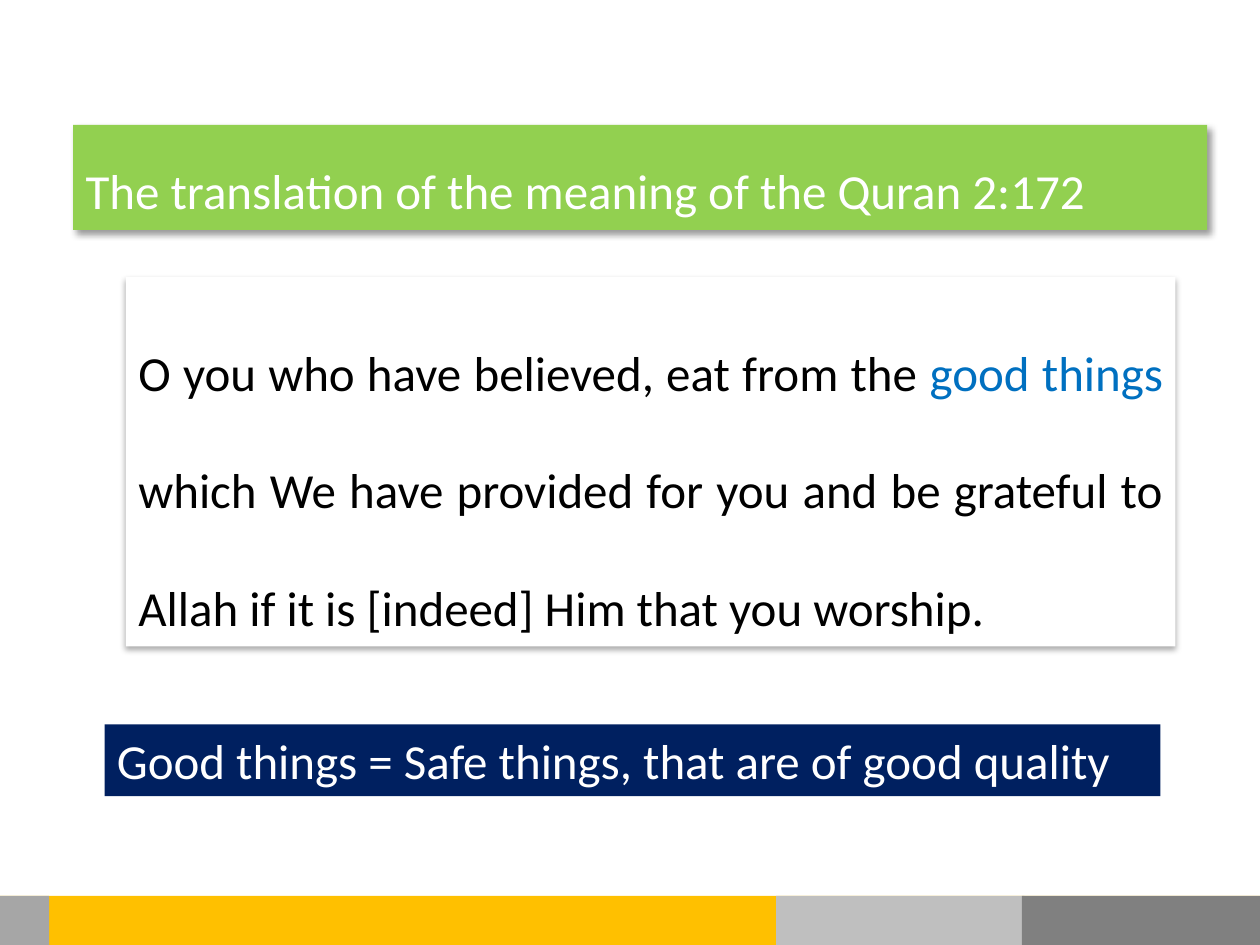
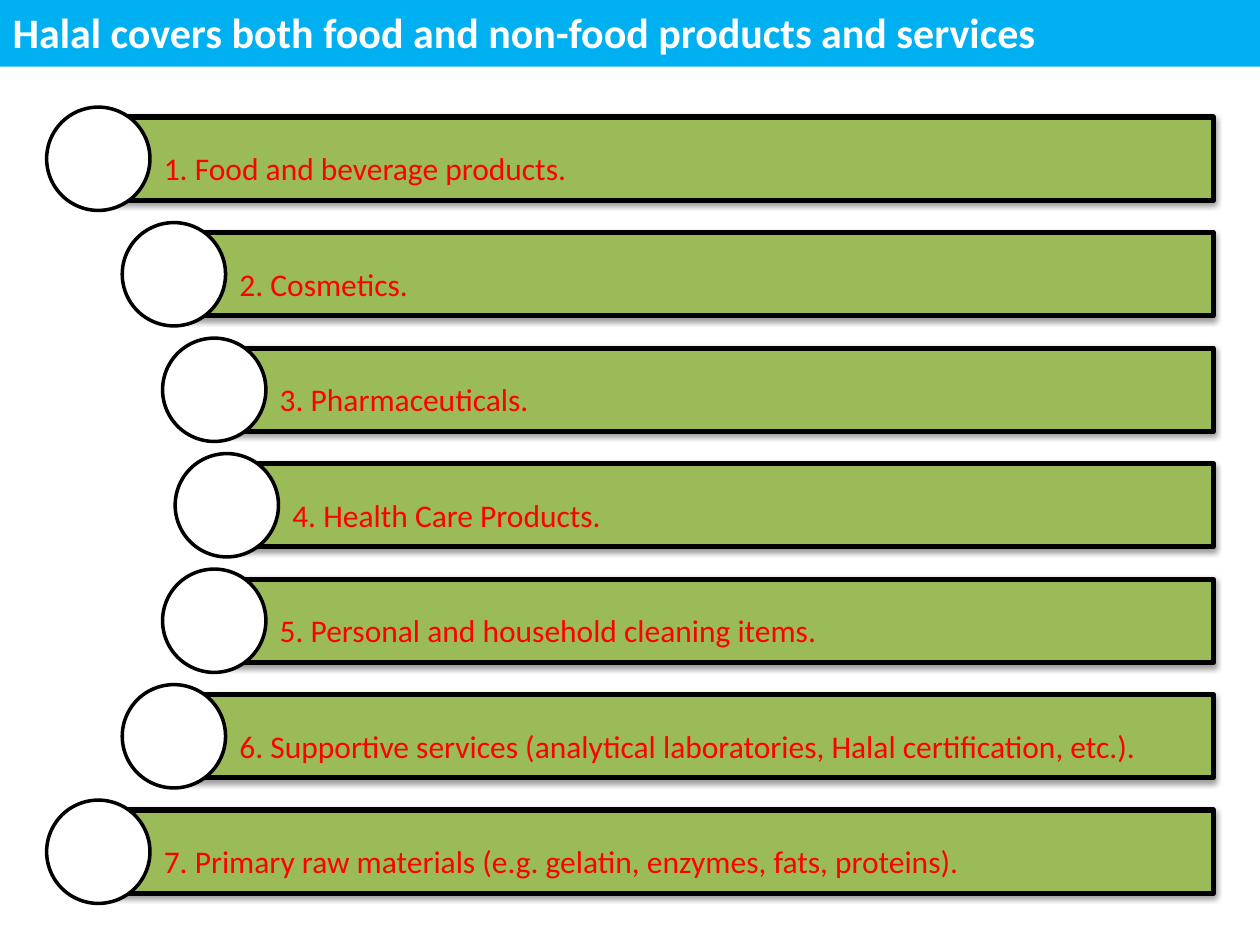
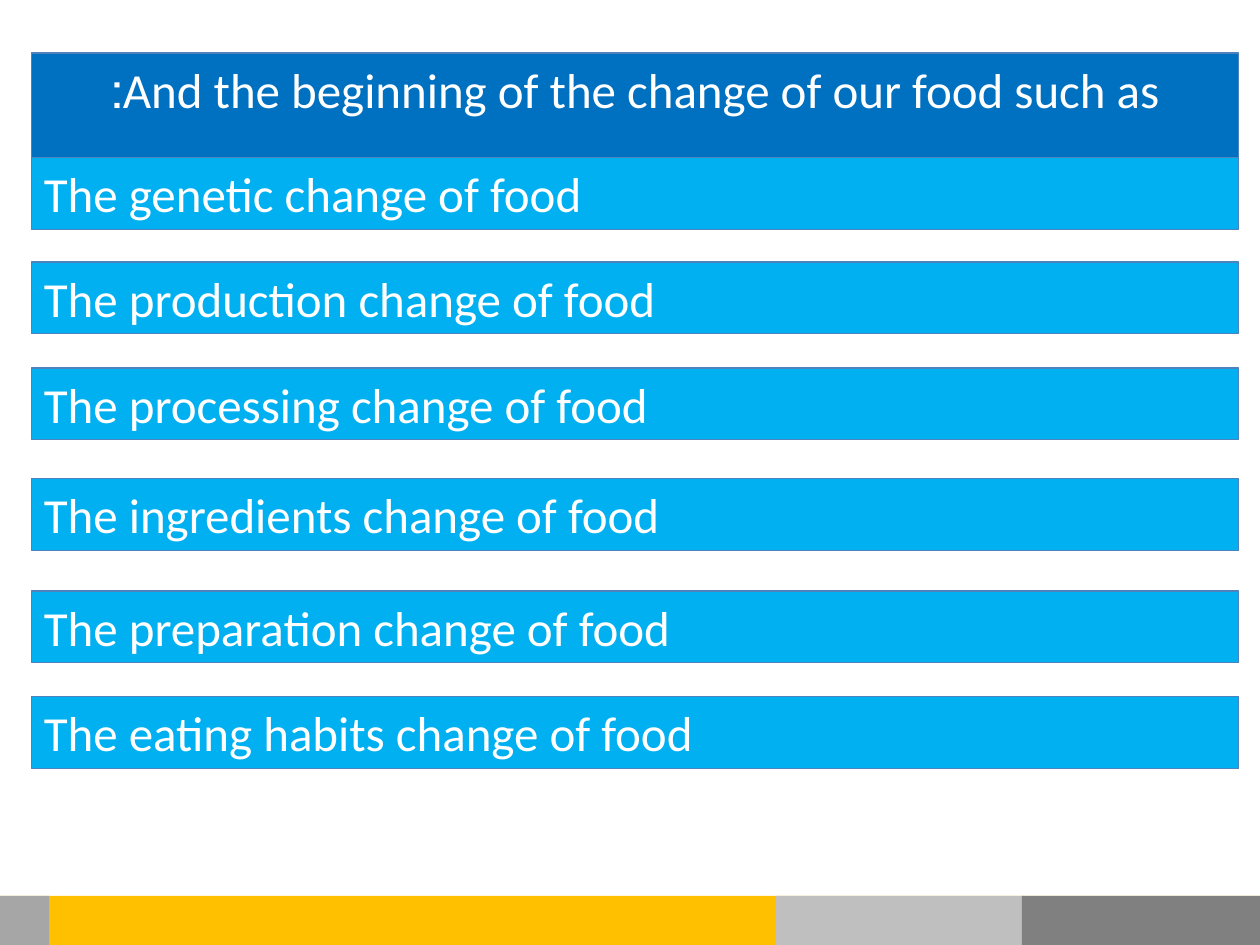
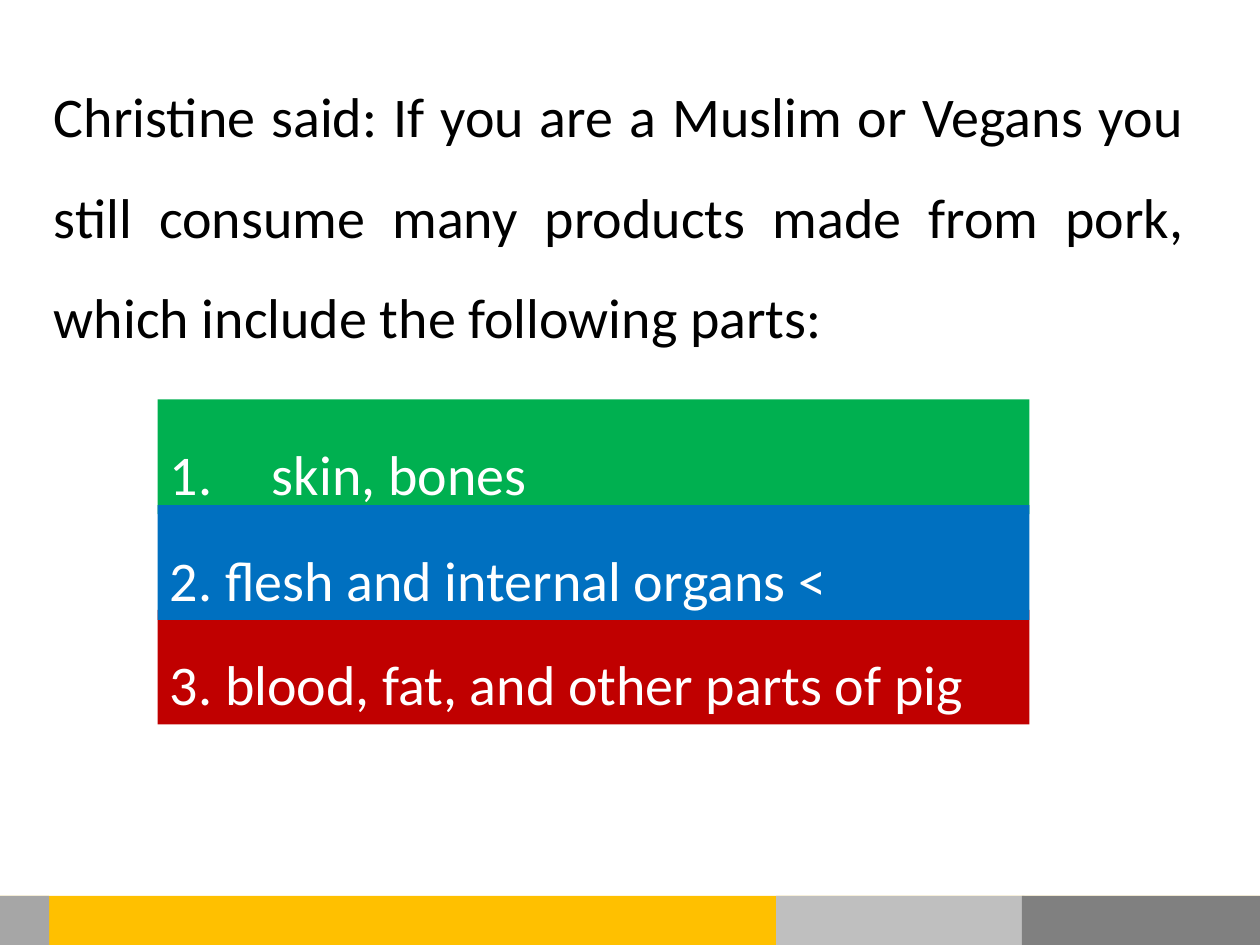
from lxml import etree
from pptx import Presentation
from pptx.dml.color import RGBColor
from pptx.enum.shapes import MSO_SHAPE
from pptx.enum.text import MSO_ANCHOR, MSO_AUTO_SIZE, PP_ALIGN
from pptx.oxml.ns import qn
from pptx.util import Inches, Pt

RECT, OVAL = MSO_SHAPE.RECTANGLE, MSO_SHAPE.OVAL
TOP, MIDDLE = MSO_ANCHOR.TOP, MSO_ANCHOR.MIDDLE
GROW, FIXED = MSO_AUTO_SIZE.SHAPE_TO_FIT_TEXT, MSO_AUTO_SIZE.NONE
LEFT, CENTER, JUSTIFY = PP_ALIGN.LEFT, PP_ALIGN.CENTER, PP_ALIGN.JUSTIFY
TITLE_ONLY, BLANK = 5, 6

FONT = "Calibri"
WHITE = RGBColor(0xFF, 0xFF, 0xFF)
BLACK = RGBColor(0, 0, 0)
RED = RGBColor(0xFF, 0, 0)
DARK_RED = RGBColor(0xC0, 0, 0)
BLUE = RGBColor(0, 0x70, 0xC0)
SKY = RGBColor(0, 0xB0, 0xF0)
NAVY = RGBColor(0, 0x20, 0x60)
EDGE = RGBColor(0x4F, 0x81, 0xBD)
LIME = RGBColor(0x92, 0xD0, 0x50)
OLIVE = RGBColor(0x9B, 0xBB, 0x59)
GREEN = RGBColor(0, 0xB0, 0x50)
AMBER = RGBColor(0xFF, 0xC0, 0)
LIGHT_GREY = RGBColor(0xBF, 0xBF, 0xBF)
MID_GREY = RGBColor(0xA6, 0xA6, 0xA6)
DARK_GREY = RGBColor(0x80, 0x80, 0x80)

# Shadows: opacity %, blur pt, distance pt, direction degrees
CARD_SHADOW = (32, 3.5, 2.2, 90)
TITLE_SHADOW = (40, 4, 3, 45)
BAR_SHADOW = (38, 3.1, 1.6, 90)

# Content
FOOTER = [(0, 10.04, AMBER), (6.16, 1.97, LIGHT_GREY),
          (8.11, 1.97, DARK_GREY), (0, 0.39, MID_GREY)]

VERSE_TITLE = "The translation of the meaning of the Quran 2:172"
VERSE = [
    ("O you who have believed, eat from the ", BLACK),
    ("good things ", BLUE),
    ("which We have provided for you and be grateful to Allah if it is "
     "[indeed] Him that you worship.", BLACK),
]
VERSE_NOTE = "Good things = Safe things, that are of good quality"

SCOPE_TITLE = "Halal covers both food and non-food products and services"
SCOPE = [
    "1. Food and beverage products.",
    "2. Cosmetics.",
    "3. Pharmaceuticals.",
    "4. Health Care Products.",
    "5. Personal and household cleaning items.",
    "6. Supportive services (analytical laboratories, Halal certification, etc.).",
    "7. Primary raw materials (e.g. gelatin, enzymes, fats, proteins).",
]
ARC_LEFTS = [0.78, 1.38, 1.7, 1.8]

CHANGE_TITLE = "And the beginning of the change of our food such as:"
CHANGES = [
    ("genetic", 1.25), ("production", 2.08), ("processing", 2.92),
    ("ingredients", 3.8), ("preparation", 4.69), ("eating habits", 5.53),
]

PORK_INTRO = ("Christine said: If you are a Muslim or Vegans you still consume many "
              "products made from pork, which include the following parts:")
# The middle part is last because it overlaps both neighbours
PORK_PARTS = [
    ("skin, bones", GREEN, 3.17, True),
    ("3. blood, fat, and other parts of pig", DARK_RED, 4.84, False),
    ("2. flesh and internal organs <", BLUE, 4.01, False),
]


def place(s, box):
    s.left, s.top, s.width, s.height = [Inches(v) for v in box]


def style(s, fill, line=None, width=0.75, shadow=None):
    s.fill.solid()
    s.fill.fore_color.rgb = fill
    if line is None:
        s.line.fill.background()
    else:
        s.line.color.rgb = line
        s.line.width = Pt(width)
    s.shadow.inherit = False
    if shadow:
        alpha, blur, dist, angle = shadow
        effects = s._element.spPr.find(qn("a:effectLst"))
        outer = etree.SubElement(
            effects, qn("a:outerShdw"), blurRad=str(Pt(blur)), dist=str(Pt(dist)),
            dir=str(angle * 60000), algn="ctr", rotWithShape="0")
        color = etree.SubElement(outer, qn("a:srgbClr"), val=str(BLACK))
        etree.SubElement(color, qn("a:alpha"), val=str(alpha * 1000))


def write(s, text, size=28, color=WHITE, bold=False, align=JUSTIFY, spacing=1.0,
          anchor=TOP, fit=GROW, wrap=True, hang=0, numbered=False, rtl=False, inset=None):
    """Fill a shape with one paragraph; text is a string or (text, colour) runs."""
    tf = s.text_frame
    tf.word_wrap, tf.auto_size, tf.vertical_anchor = wrap, fit, anchor
    if inset:
        tf.margin_left, tf.margin_top, tf.margin_right, tf.margin_bottom = [
            Inches(v) for v in inset]
    p = tf.paragraphs[0]
    p.alignment, p.line_spacing = align, spacing
    pPr = p._p.get_or_add_pPr()
    if hang:
        pPr.set("marL", str(Inches(hang)))
        pPr.set("indent", str(-Inches(hang)))
    if rtl:
        pPr.set("rtl", "1")
    if numbered:
        etree.SubElement(pPr, qn("a:buFont"), typeface="+mj-lt")
        etree.SubElement(pPr, qn("a:buAutoNum"), type="arabicPeriod")
    for part, tint in [(text, color)] if isinstance(text, str) else text:
        r = p.add_run()
        r.text = part
        r.font.name, r.font.size, r.font.bold = FONT, Pt(size), bold
        r.font.color.rgb = tint


def add_box(slide, box, fill, kind=RECT, **look):
    s = slide.shapes.add_shape(kind, *[Inches(v) for v in box])
    style(s, fill, **look)
    return s


def set_title(slide, text, box, fill, look=None, **fmt):
    s = slide.shapes.title
    place(s, box)
    style(s, fill, **(look or {}))
    write(s, text, **fmt)


def add_footer(slide):
    for left, width, fill in FOOTER:
        add_box(slide, (left, 7.11, width, 0.39), fill)


def verse_slide(slide):
    set_title(slide, VERSE_TITLE, (0.58, 0.99, 9, 0.75), LIME,
              {"shadow": TITLE_SHADOW}, spacing=1.5)
    card = add_box(slide, (1, 2.2, 8.33, 2.93), WHITE, shadow=CARD_SHADOW)
    write(card, VERSE, spacing=2.0)
    note = add_box(slide, (0.83, 5.75, 8.38, 0.57), NAVY)
    write(note, VERSE_NOTE, align=LEFT, wrap=False)
    add_footer(slide)


def scope_slide(slide):
    set_title(slide, SCOPE_TITLE, (0, 0, 10.01, 0.53), SKY,
              size=24, bold=True, fit=FIXED, hang=0.38)
    right, height, disc, pitch = 9.63, 0.66, 0.82, 5.5 / 6
    for i, text in enumerate(SCOPE):
        left = ARC_LEFTS[min(i, len(SCOPE) - 1 - i)]
        top = 0.93 + i * pitch
        bar = add_box(slide, (left, top, right - left, height), OLIVE,
                      line=BLACK, width=3, shadow=BAR_SHADOW)
        write(bar, text, size=18, color=RED, spacing=1.5, anchor=MIDDLE, fit=FIXED,
              inset=(0.52, 0.05, 0.05, 0.05))
        add_box(slide, (left - disc / 2, top + (height - disc) / 2, disc, disc),
                WHITE, kind=OVAL, line=BLACK, width=2)


def change_slide(slide):
    left, width, height = 0.25, 9.58, 0.57
    set_title(slide, CHANGE_TITLE, (left, 0.42, width, height), BLUE,
              {"line": EDGE}, align=CENTER, rtl=True)
    for change, top in CHANGES:
        bar = add_box(slide, (left, top, width, height), SKY, line=EDGE)
        write(bar, f"The {change} change of food")
    add_footer(slide)


def pork_slide(slide):
    intro = slide.shapes.add_textbox(0, 0, 0, 0)
    place(intro, (0.33, 0.33, 9.17, 2.52))
    write(intro, PORK_INTRO, size=32, color=BLACK, spacing=1.5)
    for text, fill, top, numbered in PORK_PARTS:
        bar = add_box(slide, (1.25, top, 6.92, 0.91), fill)
        write(bar, text, size=32, spacing=1.5, hang=0.81, numbered=numbered)
    add_footer(slide)


def main():
    prs = Presentation()
    prs.slide_width, prs.slide_height = Inches(10), Inches(7.5)
    for build, layout in [(verse_slide, TITLE_ONLY), (scope_slide, TITLE_ONLY),
                          (change_slide, TITLE_ONLY), (pork_slide, BLANK)]:
        build(prs.slides.add_slide(prs.slide_layouts[layout]))
    prs.save("out.pptx")


if __name__ == "__main__":
    main()
